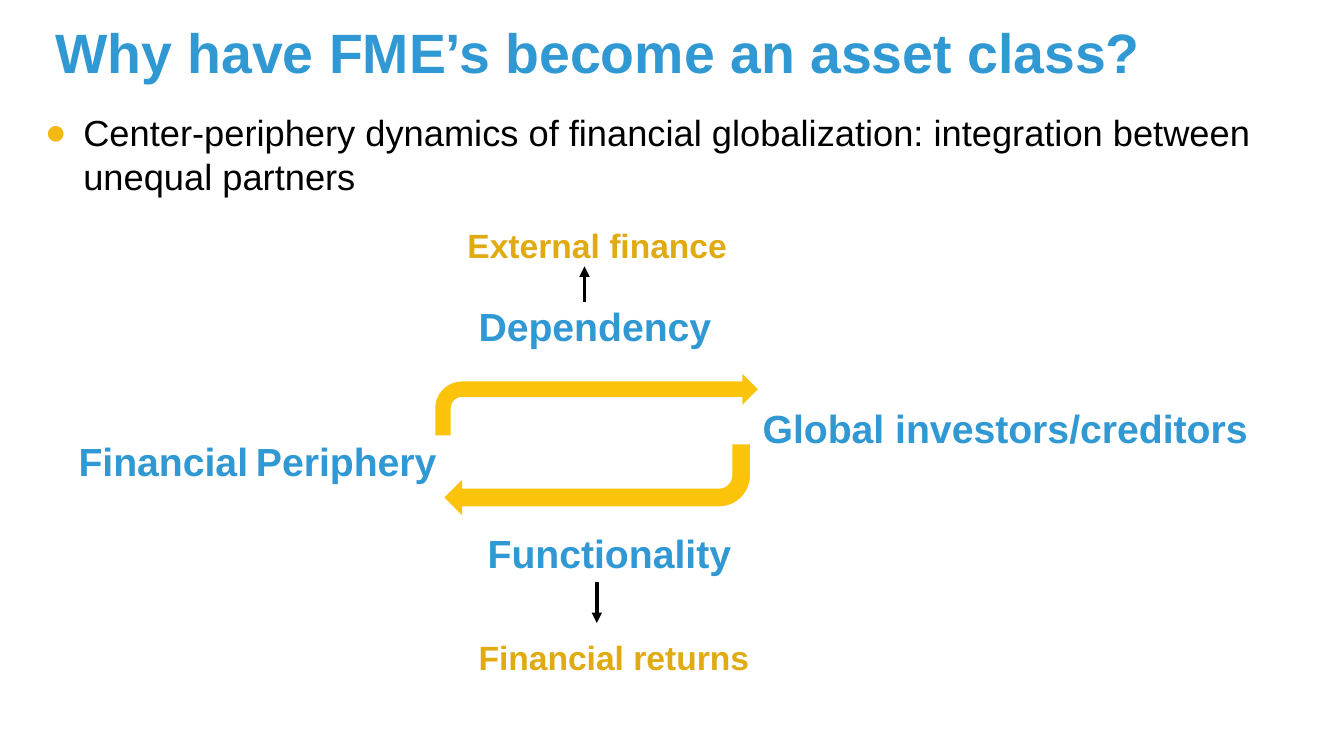
from dataclasses import dataclass

from lxml import etree
from pptx import Presentation
from pptx import util as u
from pptx.dml.color import RGBColor
from pptx.enum import shapes, text
from pptx.oxml import ns


@dataclass(frozen=True)
class Theme:
    font: str = "Arial"
    blue: str = "3098D2"
    gold: str = "E0AA11"
    arrow: str = "FCC30B"
    bullet: str = "F3B811"
    black: str = "000000"
    title_size: float = 39.6
    body_size: float = 25.9
    node_size: float = 28
    outcome_size: float = 24
    gap_size: float = 20
    line_width: float = 2.5


@dataclass(frozen=True)
class Box:
    """A region in centimetres."""
    left: float
    top: float
    width: float
    height: float

    def inner(self, left, top, width, height):
        return Box(self.left + left, self.top + top, width, height)

    def lengths(self):
        return [u.Cm(n) for n in (self.left, self.top, self.width, self.height)]


THEME = Theme()


def add_element(parent, tag, **attributes):
    return etree.SubElement(parent, ns.qn(tag), attributes)


def style(font, size, color, bold=False):
    font.name = THEME.font
    font.size = u.Pt(size)
    font.bold = bold
    font.color.rgb = RGBColor.from_string(color)


def add_text(page, box, spans, color, bold=True):
    """Add one paragraph made of (words, size) spans."""
    frame = page.shapes.add_textbox(*box.lengths()).text_frame
    frame.word_wrap = True
    para = frame.paragraphs[0]
    for words, size in spans:
        span = para.add_run()
        span.text = words
        style(span.font, size, color, bold)
    return frame


def center_vertically(frame):
    frame.vertical_anchor = text.MSO_ANCHOR.MIDDLE
    frame.margin_top = frame.margin_bottom = u.Cm(0.25)


def add_title(page, box, words):
    frame = add_text(page, box, [(words, THEME.title_size)], THEME.blue)
    center_vertically(frame)
    frame.paragraphs[0].line_spacing = 0.9


def add_body(page, box, words):
    frame = add_text(page, box, [(words, THEME.body_size)], THEME.black, bold=False)
    center_vertically(frame)
    # Hanging bullet
    props = frame.paragraphs[0]._p.get_or_add_pPr()
    props.set("marL", str(u.Cm(1.27)))
    props.set("indent", str(u.Cm(-0.97)))
    add_element(add_element(props, "a:buClr"), "a:srgbClr", val=THEME.bullet)
    add_element(props, "a:buFont", typeface=THEME.font)
    add_element(props, "a:buChar", char="●")


def add_bent_arrow(page, box, rotation):
    arrow = page.shapes.add_shape(shapes.MSO_SHAPE.BENT_ARROW, *box.lengths())
    arrow.rotation = rotation
    arrow.shadow.inherit = False
    arrow.fill.solid()
    arrow.fill.fore_color.rgb = RGBColor.from_string(THEME.arrow)
    arrow.line.fill.background()


def add_vertical_arrow(page, box):
    """Draw an arrow down the box; a negative height points it up."""
    left, top, _, height = box.lengths()
    arrow = page.shapes.add_connector(
        shapes.MSO_CONNECTOR.STRAIGHT, left, top, left, top + height)
    arrow.line.width = u.Pt(THEME.line_width)
    arrow.line.color.rgb = RGBColor.from_string(THEME.black)
    props = arrow._element.spPr
    add_element(props.find(ns.qn("a:ln")), "a:tailEnd", type="triangle")
    add_element(props, "a:effectLst")


def add_cycle(page, box):
    # Partners and the ties between them
    node, gap = THEME.node_size, THEME.gap_size
    periphery = [("Financial", node), (" ", gap), ("Periphery", node)]
    for spans, left, top, width in (
        (periphery, 0, 5.36, 9.8),
        ([("Global investors/creditors", node)], 17.24, 4.52, 12.85),
        ([("Dependency", node)], 10.08, 1.95, 6.86),
        ([("Functionality", node)], 10.31, 7.67, 6.86),
    ):
        add_text(page, box.inner(left, top, width, 1.45), spans, THEME.blue)

    # Outcomes above and below
    for words, left, top, width in (
        ("External finance", 9.8, 0, 7.09),
        ("Financial returns", 10.08, 10.39, 7.82),
    ):
        add_text(page, box.inner(left, top, width, 1.27),
                 [(words, THEME.outcome_size)], THEME.gold)

    # Arrows of the loop, then arrows to the outcomes
    add_bent_arrow(page, box.inner(9.24, 3.88, 8.13, 1.55), 0)
    add_bent_arrow(page, box.inner(9.47, 5.66, 7.7, 1.78), 180)
    add_vertical_arrow(page, box.inner(13, 2.08, 0, -0.91))
    add_vertical_arrow(page, box.inner(13.31, 9.12, 0, 1.04))


def main():
    deck = Presentation()
    deck.slide_width, deck.slide_height = u.Cm(33.87), u.Cm(19.05)
    page = deck.slides.add_slide(deck.slide_layouts[6])
    add_title(page, Box(1.14, 0.33, 31.55, 2.13),
              "Why have FME’s become an asset class?")
    add_body(page, Box(0.58, 2.49, 32.72, 2.79),
             "Center-periphery dynamics of financial globalization: "
             "integration between unequal partners")
    add_cycle(page, Box(1.73, 5.54, 30.09, 11.66))
    deck.save("out.pptx")


if __name__ == "__main__":
    main()
